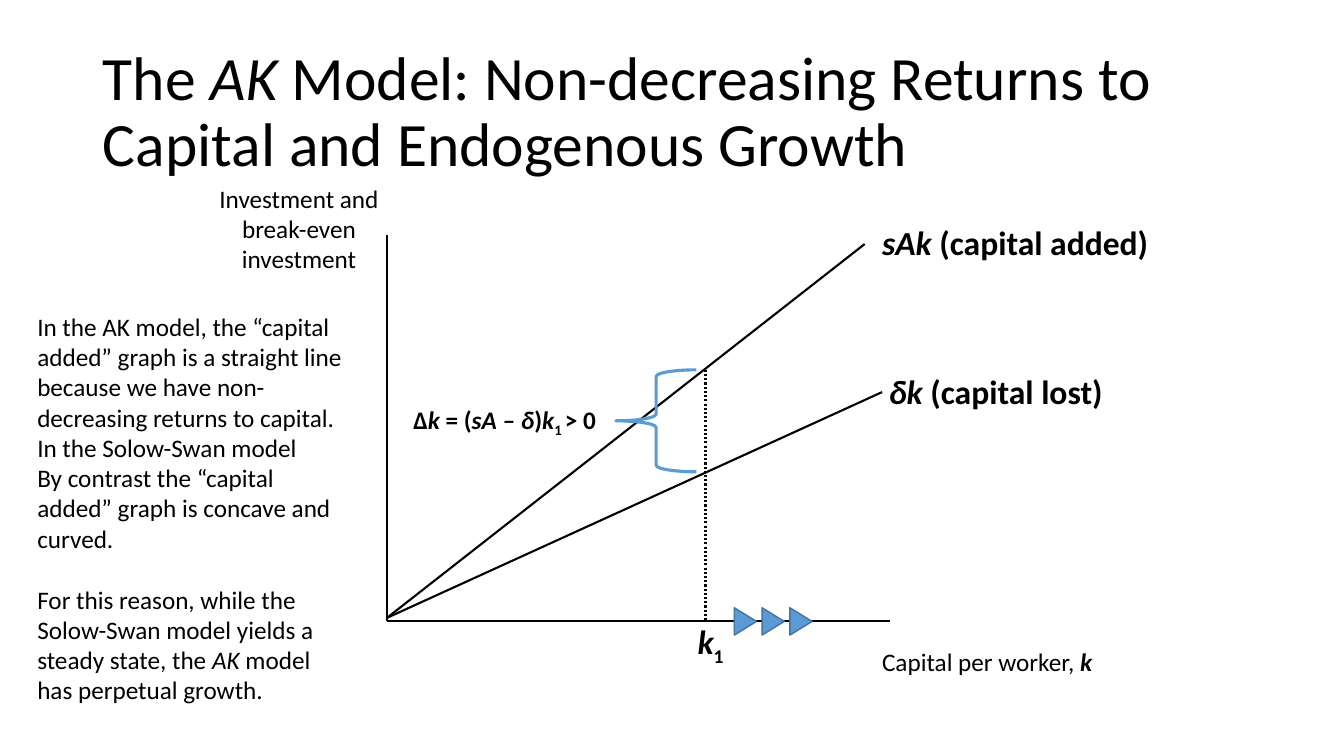
"""Build the slide on the AK growth model."""
from lxml.etree import SubElement
from pptx import Presentation
from pptx.dml.color import RGBColor
from pptx.enum.dml import MSO_LINE
from pptx.enum.shapes import MSO_CONNECTOR, MSO_SHAPE as Form
from pptx.enum.text import MSO_ANCHOR as Anchor, MSO_AUTO_SIZE as Fit, PP_ALIGN as Align
from pptx.oxml.ns import qn
from pptx.util import Cm, Pt

HUES = {"ink": "000000", "blue": "5B9BD5", "edge": "43739E"}
FONT = "Calibri"


def hue(name):
    return RGBColor.from_string(HUES[name])


def write(frame, text, size=18, bold=False, align=Align.LEFT, lead=None, gaps=()):
    for row, line in enumerate(text.split("\n")):
        para = frame.paragraphs[0] if row == 0 else frame.add_paragraph()
        para.alignment = align
        if lead:
            para.line_spacing = lead
        if row < len(gaps):
            para.space_before = Pt(gaps[row])
        for i, part in enumerate(line.split("*")):
            for j, bit in enumerate(part.split("_")):
                if not bit:
                    continue
                run = para.add_run()
                run.text = bit
                font = run.font
                font.name, font.size = FONT, Pt(size)
                font.bold, font.italic = bold, i % 2 == 1
                font.color.rgb = hue("ink")
                if j % 2:
                    run._r.get_or_add_rPr().set("baseline", "-25000")


class Board:
    def __init__(self, deck):
        self.slide = deck.slides.add_slide(deck.slide_layouts[5])
        self.shapes = self.slide.shapes

    def title(self, text, box, **form):
        head = self.shapes.title
        head.left, head.top, head.width, head.height = map(Cm, box)
        frame = head.text_frame
        frame.auto_size, frame.vertical_anchor = Fit.NONE, Anchor.MIDDLE
        write(frame, text, **form)

    def text(self, text, box, inset=None, anchor=Anchor.MIDDLE, **form):
        frame = self.shapes.add_textbox(*map(Cm, box)).text_frame
        frame.word_wrap, frame.auto_size = True, Fit.SHAPE_TO_FIT_TEXT
        frame.vertical_anchor = anchor
        if inset is not None:
            frame.margin_left = frame.margin_right = Cm(inset)
            frame.margin_top = frame.margin_bottom = Cm(inset)
        write(frame, text, **form)

    def line(self, ends, width=1.5, dash=None):
        link = self.shapes.add_connector(MSO_CONNECTOR.STRAIGHT, *map(Cm, ends))
        link.line.color.rgb, link.line.width = hue("ink"), Pt(width)
        if dash:
            link.line.dash_style = dash
        SubElement(link._element.spPr, qn("a:effectLst"))

    def shape(self, form, box, edge, width, fill=None, turn=0):
        item = self.shapes.add_shape(form, *map(Cm, box))
        item.shadow.inherit = False
        item.rotation = turn
        item.line.color.rgb, item.line.width = hue(edge), Pt(width)
        if fill:
            item.fill.solid()
            item.fill.fore_color.rgb = hue(fill)
        else:
            item.fill.background()


def main():
    deck = Presentation()
    deck.slide_width, deck.slide_height = Cm(33.87), Cm(19.05)
    board = Board(deck)
    board.title("The *AK* Model: Non-decreasing Returns to Capital and Endogenous Growth",
                (2.34, 1.02, 29.21, 3.68), size=44, lead=0.9)

    left, base = 9.75, 15.65
    board.line((left, 5.92, left, base), width=1)
    board.line((left, base, 22.43, base), width=1)
    board.line((left, 15.57, 21.79, 6.15))
    board.line((left, 15.57, 22.23, 9.88))
    board.line((17.78, 9.32, 17.78, base), dash=MSO_LINE.ROUND_DOT)

    board.text("Investment and break-even investment", (4.65, 4.6, 5.77, 2.31),
               inset=0, align=Align.CENTER)
    board.text("Capital per worker, ", (22.23, 16.28, 6.76, 0.76), inset=0)
    worker = board.shapes[-1].text_frame.paragraphs[0].add_run()
    worker.text = "k"
    worker.font.name, worker.font.size = FONT, Pt(18)
    worker.font.bold = worker.font.italic = True
    worker.font.color.rgb = hue("ink")
    for label, box in (
        ("*sAk* (capital added)", (22.23, 5.59, 6.76, 1.02)),
        ("*δk* (capital lost)", (22.4, 9.35, 6.1, 1.02)),
        ("*k*_1_", (17.58, 15.72, 1.47, 1.02)),
    ):
        board.text(label, box, inset=0, size=24, bold=True)

    board.text("In the AK model, the “capital added” graph is a straight line because "
               "we have non-decreasing returns to capital. In the Solow-Swan model\n"
               "By contrast the “capital added” graph is concave and curved.\n"
               "For this reason, while the Solow-Swan model yields a steady state, "
               "the *AK* model has perpetual growth.",
               (0.69, 7.72, 8.28, 10.26), anchor=Anchor.TOP, gaps=(0, 0, 22))

    board.shape(Form.LEFT_BRACE, (15.52, 9.32, 2.03, 2.57), "blue", 2.25)
    board.text("Δ*k* = (*sA – δ*)*k*_1 _> 0", (9.96, 10.06, 5.31, 1.02),
               anchor=Anchor.TOP, bold=True, align=Align.RIGHT)
    for step in range(3):
        board.shape(Form.ISOSCELES_TRIANGLE, (18.44 + 0.7 * step, 15.38, 0.69, 0.56),
                    "edge", 1, fill="blue", turn=90)
    deck.save("out.pptx")


if __name__ == "__main__":
    main()
